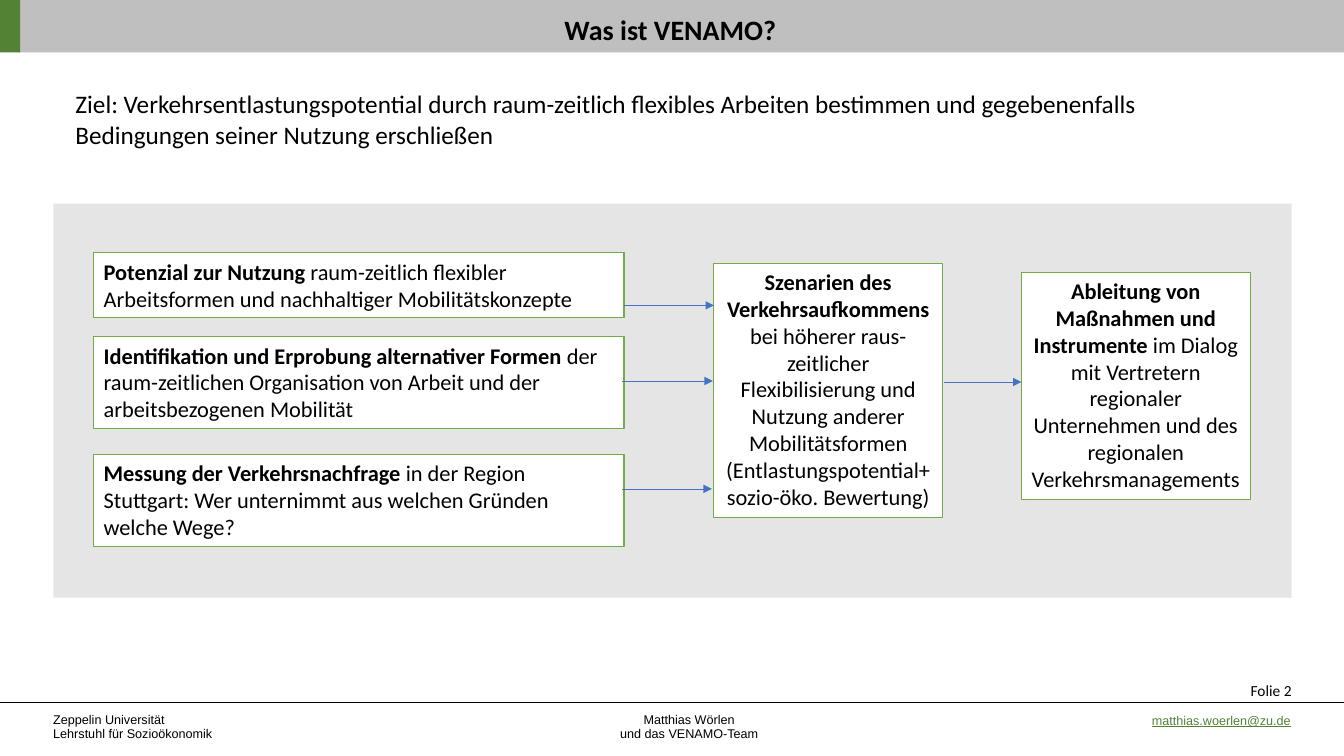
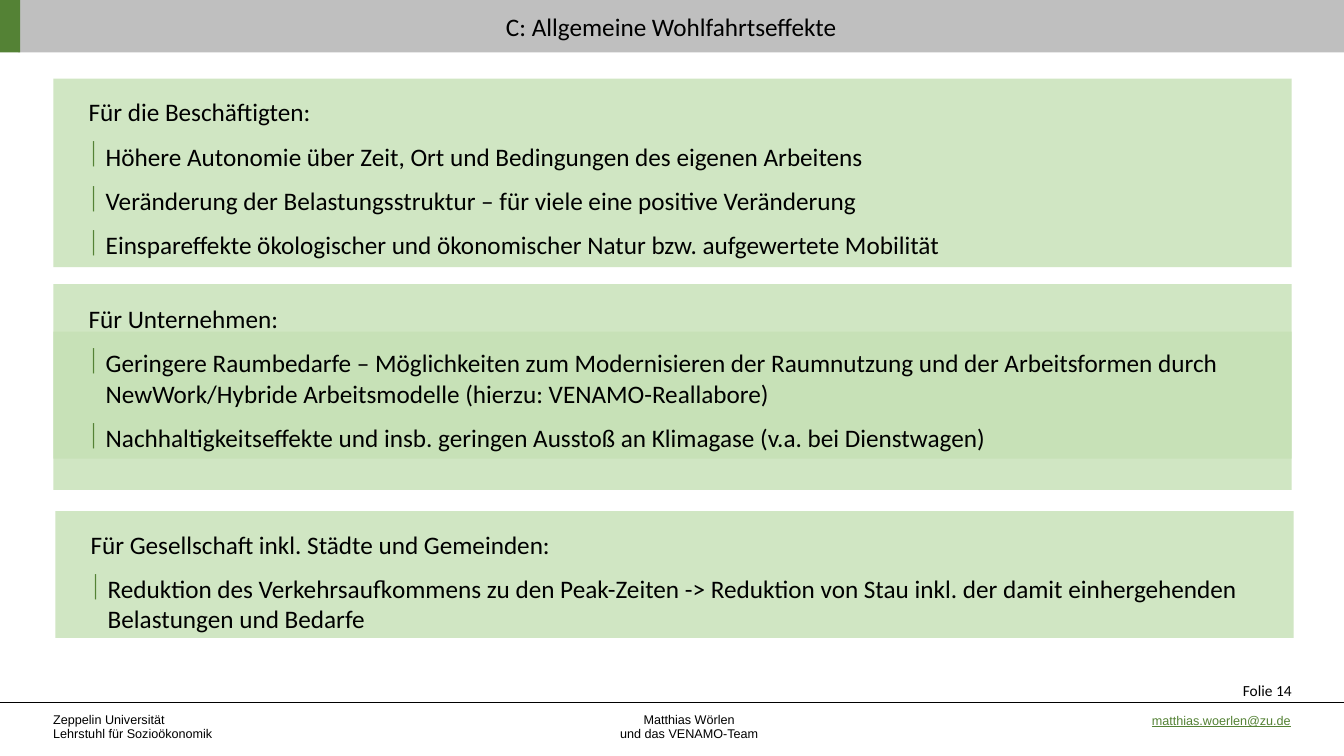
"""Build two VENAMO slides with a shared header and footer."""
import dataclasses
import typing

import lxml.etree
import pptx
import pptx.dml.color
import pptx.enum.shapes
import pptx.enum.text
import pptx.oxml.ns
import pptx.slide
import pptx.util

Inches = pptx.util.Inches
Pt = pptx.util.Pt
qn = pptx.oxml.ns.qn
ALIGN = pptx.enum.text.PP_ALIGN
ANCHOR = pptx.enum.text.MSO_ANCHOR
FIT = pptx.enum.text.MSO_AUTO_SIZE


@dataclasses.dataclass(frozen=True)
class Theme:
    ink: str = "000000"
    paper: str = "FFFFFF"
    bar: str = "BFBFBF"
    green: str = "548235"
    edge: str = "70AD47"
    arrow: str = "4472C4"
    panel: str = "D9D9D9"
    band: str = "C5E0B4"
    main: str = "Calibri"
    small: str = "Arial"
    head: int = 20
    body: int = 18
    box: int = 16
    page: int = 11
    foot: int = 9
    thin: float = 0.5
    rim: float = 0.75


THEME = Theme()


class Area(typing.NamedTuple):
    left: float
    top: float
    width: float
    height: float


class Run(typing.NamedTuple):
    text: str
    bold: bool = False


@dataclasses.dataclass(frozen=True)
class Para:
    runs: tuple[Run, ...]
    bullet: bool = False


@dataclasses.dataclass(frozen=True)
class Style:
    size: int
    face: str = THEME.main
    ink: str = THEME.ink
    line: bool = False
    para: dict[str, typing.Any] = dataclasses.field(default_factory=dict)
    frame: dict[str, typing.Any] = dataclasses.field(default_factory=dict)


class Box(typing.NamedTuple):
    area: Area
    lead: str
    rest: str
    align: typing.Any = ALIGN.LEFT


class Group(typing.NamedTuple):
    area: Area
    head: str
    points: tuple[str, ...]


GROW = {"word_wrap": True, "auto_size": FIT.SHAPE_TO_FIT_TEXT}
TIGHT = GROW | {"word_wrap": False}
BODY = Style(THEME.body, para={"space_after": Pt(10)}, frame=GROW)

BOXES = (
    Box(Area(0.93, 2.51, 5.26, 0.64), "Potenzial zur Nutzung ",
        "raum-zeitlich flexibler Arbeitsformen und nachhaltiger Mobilitätskonzepte"),
    Box(Area(0.93, 3.34, 5.26, 0.91), "Identifikation und Erprobung alternativer Formen ",
        "der raum-zeitlichen Organisation von Arbeit und der arbeitsbezogenen Mobilität"),
    Box(Area(0.93, 4.51, 5.26, 0.91), "Messung der Verkehrsnachfrage ",
        "in der Region Stuttgart: Wer unternimmt aus welchen Gründen welche Wege?"),
    Box(Area(7.08, 2.61, 2.27, 2.52), "Szenarien des Verkehrsaufkommens ",
        "bei höherer raus-zeitlicher Flexibilisierung und Nutzung anderer "
        "Mobilitätsformen (Entlastungspotential+sozio-öko. Bewertung)", ALIGN.CENTER),
    Box(Area(10.13, 2.7, 2.27, 2.26), "Ableitung von Maßnahmen und Instrumente ",
        "im Dialog mit Vertretern regionaler Unternehmen und des regionalen "
        "Verkehrsmanagements", ALIGN.CENTER),
)
ARROWS = ((6.19, 7.08, 3.03), (6.17, 7.07, 3.78), (6.17, 7.06, 4.85), (9.36, 10.13, 3.79))

BANDS = (Area(0.53, 0.78, 12.28, 1.87), Area(0.53, 3.29, 12.28, 1.26),
         Area(0.55, 5.07, 12.28, 1.26), Area(0.53, 2.82, 12.28, 2.04))
GROUPS = (
    Group(Area(0.78, 0.91, 11.82, 1.73), "Für die Beschäftigten:", (
        "Höhere Autonomie über Zeit, Ort und Bedingungen des eigenen Arbeitens",
        "Veränderung der Belastungsstruktur – für viele eine positive Veränderung",
        "Einspareffekte ökologischer und ökonomischer Natur bzw. aufgewertete Mobilität")),
    Group(Area(0.78, 2.96, 11.82, 1.59), "Für Unternehmen:", (
        "Geringere Raumbedarfe – Möglichkeiten zum Modernisieren der Raumnutzung und der "
        "Arbeitsformen durch NewWork/Hybride Arbeitsmodelle (hierzu: VENAMO-Reallabore)",
        "Nachhaltigkeitseffekte und insb. geringen Ausstoß an Klimagase (v.a. bei Dienstwagen)")),
    Group(Area(0.8, 5.2, 11.82, 1.59), "Für Gesellschaft inkl. Städte und Gemeinden:", (
        "Reduktion des Verkehrsaufkommens zu den Peak-Zeiten -> Reduktion von Stau inkl. "
        "der damit einhergehenden Belastungen und Bedarfe",)),
)


def apply(item: typing.Any, values: dict[str, typing.Any]) -> None:
    for key, value in values.items():
        setattr(item, key, value)


def tint(code: str) -> pptx.dml.color.RGBColor:
    return pptx.dml.color.RGBColor.from_string(code)


def place(area: Area) -> list[pptx.util.Length]:
    return [Inches(value) for value in area]


def plain(*lines: str) -> list[Para]:
    return [Para((Run(line),)) for line in lines]


def mark(para: typing.Any) -> None:
    props = para._p.get_or_add_pPr()
    props.set("marL", str(Inches(0.17)))
    props.set("indent", str(-Inches(0.17)))
    hue = lxml.etree.SubElement(props, qn("a:buClr"))
    lxml.etree.SubElement(hue, qn("a:srgbClr"), val=THEME.green)
    lxml.etree.SubElement(props, qn("a:buChar"), char="|")


def write(shape: typing.Any, paras: list[Para], style: Style) -> None:
    frame = shape.text_frame
    apply(frame, style.frame)
    for spot, item in enumerate(paras):
        para = frame.add_paragraph() if spot else frame.paragraphs[0]
        if item.bullet:
            mark(para)
        apply(para, {"alignment": ALIGN.LEFT} | style.para)
        for part in item.runs:
            run = para.add_run()
            run.text = part.text
            apply(run.font, {"size": Pt(style.size), "name": style.face,
                             "bold": part.bold, "underline": style.line})
            run.font.color.rgb = tint(style.ink)


def label(slide: pptx.slide.Slide, area: Area, paras: list[Para], style: Style) -> None:
    write(slide.shapes.add_textbox(*place(area)), paras, style)


def block(slide: pptx.slide.Slide, area: Area, fill: str,
          edge: str = "", alpha: int = 100) -> typing.Any:
    shape = slide.shapes.add_shape(pptx.enum.shapes.MSO_SHAPE.RECTANGLE, *place(area))
    shape.shadow.inherit = False
    shape.fill.solid()
    shape.fill.fore_color.rgb = tint(fill)
    if alpha < 100:
        hue = shape.element.spPr.find(".//" + qn("a:srgbClr"))
        lxml.etree.SubElement(hue, qn("a:alpha"), val=str(alpha * 1000))
    if edge:
        shape.line.color.rgb = tint(edge)
        shape.line.width = Pt(THEME.rim)
    else:
        shape.line.fill.background()
    return shape


def rule(slide: pptx.slide.Slide, start: float, end: float, top: float,
         hue: str, tip: bool = False) -> None:
    line = slide.shapes.add_connector(
        pptx.enum.shapes.MSO_CONNECTOR.STRAIGHT,
        Inches(start), Inches(top), Inches(end), Inches(top))
    line.line.color.rgb = tint(hue)
    line.line.width = Pt(THEME.thin)
    props = line.element.spPr
    if tip:
        lxml.etree.SubElement(props.find(qn("a:ln")), qn("a:tailEnd"), type="triangle")
    lxml.etree.SubElement(props, qn("a:effectLst"))


def start(deck: typing.Any, page: int) -> pptx.slide.Slide:
    slide = deck.slides.add_slide(deck.slide_layouts[6])
    block(slide, Area(0.18, 0, 13.15, 0.52), THEME.bar)
    block(slide, Area(0, 0, 0.2, 0.52), THEME.green)
    label(slide, Area(11.9, 6.56, 1.01, 0.58), plain(f"Folie {page}"),
          Style(THEME.page, para={"alignment": ALIGN.RIGHT},
                frame={"word_wrap": True, "vertical_anchor": ANCHOR.MIDDLE}))
    rule(slide, 0, 13.33, 6.97, THEME.ink)
    label(slide, Area(9.99, 7.03, 2.91, 0.24), plain("matthias.woerlen@zu.de"),
          Style(THEME.foot, THEME.small, THEME.green, True,
                {"alignment": ALIGN.RIGHT, "line_spacing": 0.95}, GROW))
    for area, align, lines in (
        (Area(5.61, 7.03, 2.45, 0.37), ALIGN.CENTER,
         ("Matthias Wörlen", "und das VENAMO-Team")),
        (Area(0.43, 7.03, 3.26, 0.37), ALIGN.LEFT,
         ("Zeppelin Universität", "Lehrstuhl für Sozioökonomik")),
    ):
        label(slide, area, plain(*lines),
              Style(THEME.foot, THEME.small,
                    para={"alignment": align, "line_spacing": 0.9}, frame=GROW))
    return slide


def goal(deck: typing.Any) -> None:
    slide = start(deck, 2)
    block(slide, Area(0.53, 2.02, 12.28, 3.91), THEME.panel, alpha=67)
    label(slide, Area(5.5, -0.03, 2.33, 0.5), [Para((Run("Was ist VENAMO?", True),))],
          Style(THEME.head, para={"line_spacing": 1.3}, frame=TIGHT))
    for box in BOXES:
        shape = block(slide, box.area, THEME.paper, THEME.edge)
        write(shape, [Para((Run(box.lead, True), Run(box.rest)))],
              Style(THEME.box, para={"alignment": box.align},
                    frame=GROW | {"vertical_anchor": ANCHOR.TOP}))
    for left, right, top in ARROWS:
        rule(slide, left, right, top, THEME.arrow, True)
    label(slide, Area(0.65, 0.83, 12.03, 0.71), plain(
        "Ziel: Verkehrsentlastungspotential durch raum-zeitlich flexibles Arbeiten "
        "bestimmen und gegebenenfalls Bedingungen seiner Nutzung erschließen"), BODY)


def gains(deck: typing.Any) -> None:
    slide = start(deck, 14)
    label(slide, Area(4.92, 0.06, 3.51, 0.4), plain("C: Allgemeine Wohlfahrtseffekte"),
          Style(THEME.body, frame=TIGHT))
    for area in BANDS:
        block(slide, area, THEME.band, alpha=80)
    for group in GROUPS:
        points = [Para((Run(point),), True) for point in group.points]
        label(slide, group.area, plain(group.head) + points, BODY)


def main() -> None:
    deck = pptx.Presentation()
    apply(deck, {"slide_width": Inches(13.33), "slide_height": Inches(7.5)})
    goal(deck)
    gains(deck)
    deck.save("out.pptx")


if __name__ == "__main__":
    main()
